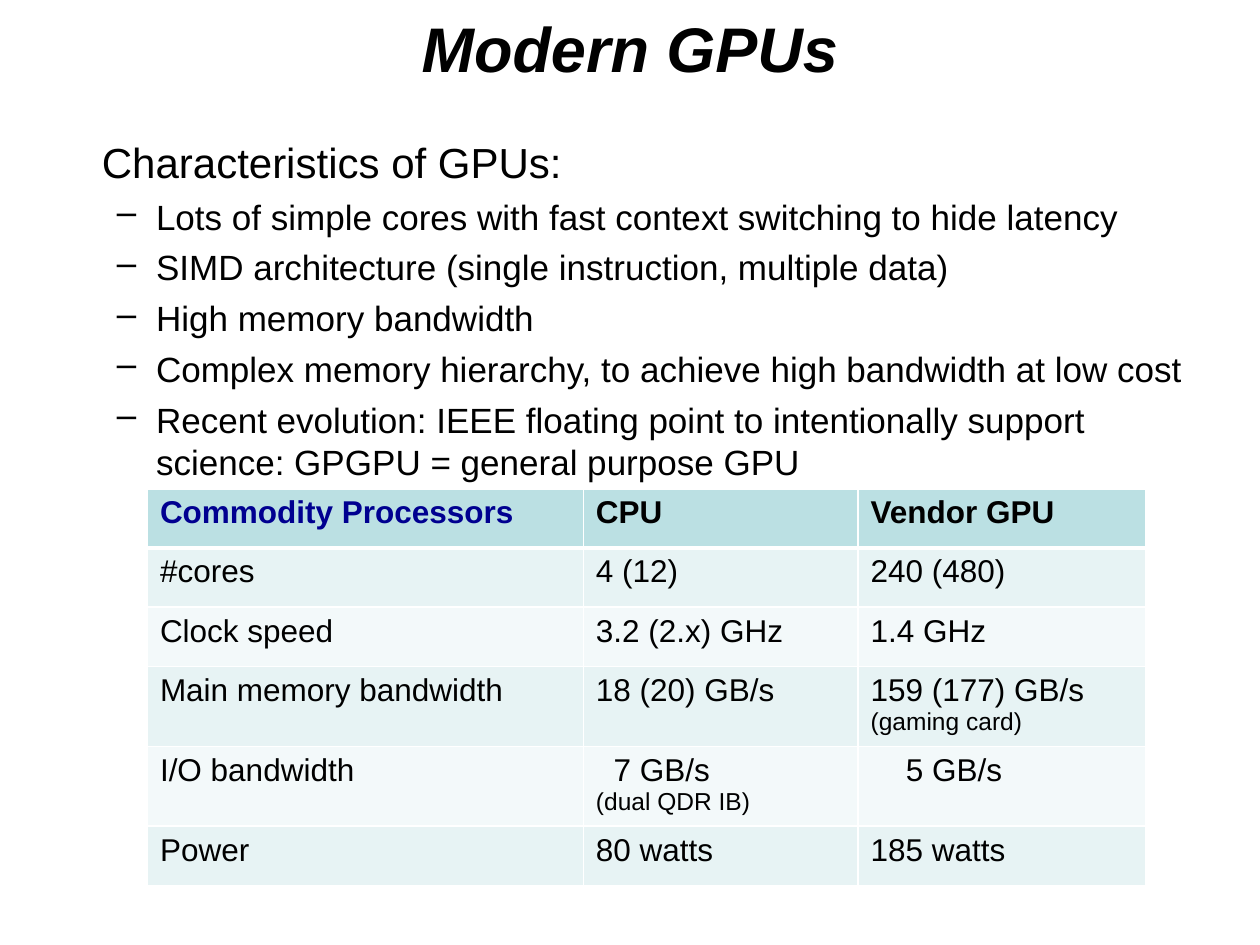
from lxml.etree import SubElement
from pptx import Presentation
from pptx.dml.color import RGBColor
from pptx.enum.text import MSO_ANCHOR, PP_ALIGN
from pptx.oxml.ns import qn
from pptx.util import Inches, Pt

BLACK, WHITE, NAVY = "000000", "FFFFFF", "000090"
HEADER_FILL, BAND_FILLS = "BBE0E3", ("E7F3F4", "F3F9FA")
BULLETS = [
    "Lots of simple cores with fast context switching to hide latency",
    "SIMD architecture (single instruction, multiple data)",
    "High memory bandwidth",
    "Complex memory hierarchy, to achieve high bandwidth at low cost",
    "Recent evolution: IEEE floating point to intentionally support science: "
    "GPGPU = general purpose GPU",
]
ROWS = [
    ["Commodity Processors", "CPU", "Vendor GPU"],
    ["#cores", "4 (12)", "240 (480)"],
    ["Clock speed", "3.2 (2.x) GHz", "1.4 GHz"],
    ["Main memory bandwidth", "18 (20) GB/s", "159 (177) GB/s\n(gaming card)"],
    ["I/O bandwidth", "7 GB/s\n(dual QDR IB)", "5 GB/s"],
    ["Power", "80 watts", "185 watts"],
]
COLUMN_WIDTHS = (3.46, 2.18, 2.28)
ROW_HEIGHTS = (0.47, 0.47, 0.47, 0.6, 0.6, 0.47)
CELL_INDENTS = {(4, 1): 0.14, (4, 2): 0.28}


def rgb(value):
    """Turn a hex string into a colour."""
    return RGBColor.from_string(value)


def style(paragraph, size, color=BLACK, bold=False, italic=False):
    """Set the font of a whole paragraph."""
    font = paragraph.font
    font.name, font.size, font.bold, font.italic = "Arial", Pt(size), bold, italic
    font.color.rgb = rgb(color)


def indent(paragraph, left, first=0, bullet=None):
    """Set the left margin, first-line indent and bullet of a paragraph."""
    properties = paragraph._p.get_or_add_pPr()
    properties.set("marL", str(Inches(left)))
    properties.set("indent", str(Inches(first)))
    if bullet:
        SubElement(properties, qn("a:buChar"), char=bullet)


def add_text_frame(slide, box):
    """Add a wrapping text box and return its text frame."""
    frame = slide.shapes.add_textbox(*map(Inches, box)).text_frame
    frame.word_wrap = True
    return frame


def add_title(slide, box):
    """Place the slide title centred in its box."""
    frame = add_text_frame(slide, box)
    frame.vertical_anchor = MSO_ANCHOR.MIDDLE
    paragraph = frame.paragraphs[0]
    paragraph.text = "Modern GPUs"
    paragraph.alignment = PP_ALIGN.CENTER
    style(paragraph, 36, bold=True, italic=True)


def add_characteristics(slide, box):
    """Place the heading and its dashed list."""
    frame = add_text_frame(slide, box)
    frame.margin_top = Inches(0.08)
    heading = frame.paragraphs[0]
    heading.text = "Characteristics of GPUs:"
    indent(heading, 0.38)
    style(heading, 24)
    for text in BULLETS:
        paragraph = frame.add_paragraph()
        paragraph.text = text
        paragraph.level = 1
        paragraph.space_before = Pt(5)
        indent(paragraph, 0.81, -0.31, "–")
        style(paragraph, 20)


def add_borders(cell, row):
    """Draw white cell borders, thicker under the header row."""
    properties = cell._tc.get_or_add_tcPr()
    widths = {"L": 1, "R": 1, "T": 3 if row == 1 else 1, "B": 3 if row == 0 else 1}
    for side, width in widths.items():
        line = SubElement(properties, qn(f"a:ln{side}"), w=str(Pt(width)))
        fill = SubElement(line, qn("a:solidFill"))
        SubElement(fill, qn("a:srgbClr"), val=WHITE)


def fill_cell(cell, row, column, text):
    """Write and format one table cell."""
    add_borders(cell, row)
    cell.fill.solid()
    cell.fill.fore_color.rgb = rgb(BAND_FILLS[(row - 1) % 2] if row else HEADER_FILL)
    cell.text = text
    value, *notes = cell.text_frame.paragraphs
    if (row, column) in CELL_INDENTS:
        indent(value, CELL_INDENTS[row, column])
    style(value, 18, NAVY if row == column == 0 else BLACK, bold=row == 0)
    for note in notes:
        style(note, 14)


def add_processor_table(slide, box):
    """Place the table comparing processors."""
    table = slide.shapes.add_table(len(ROWS), len(COLUMN_WIDTHS), *map(Inches, box)).table
    table.first_row = table.horz_banding = False
    for column, width in zip(table.columns, COLUMN_WIDTHS):
        column.width = Inches(width)
    for row, height in zip(table.rows, ROW_HEIGHTS):
        row.height = Inches(height)
    for row, texts in enumerate(ROWS):
        for column, text in enumerate(texts):
            fill_cell(table.cell(row, column), row, column, text)


def main():
    """Build the slide and save it."""
    presentation = Presentation()
    presentation.slide_width, presentation.slide_height = Inches(10), Inches(7.5)
    slide = presentation.slides.add_slide(presentation.slide_layouts[6])
    add_title(slide, (0, 0, 10, 0.75))
    add_characteristics(slide, (0.33, 1, 9.42, 5.92))
    add_processor_table(slide, (1.17, 3.88, sum(COLUMN_WIDTHS), sum(ROW_HEIGHTS)))
    presentation.save("out.pptx")


if __name__ == "__main__":
    main()
